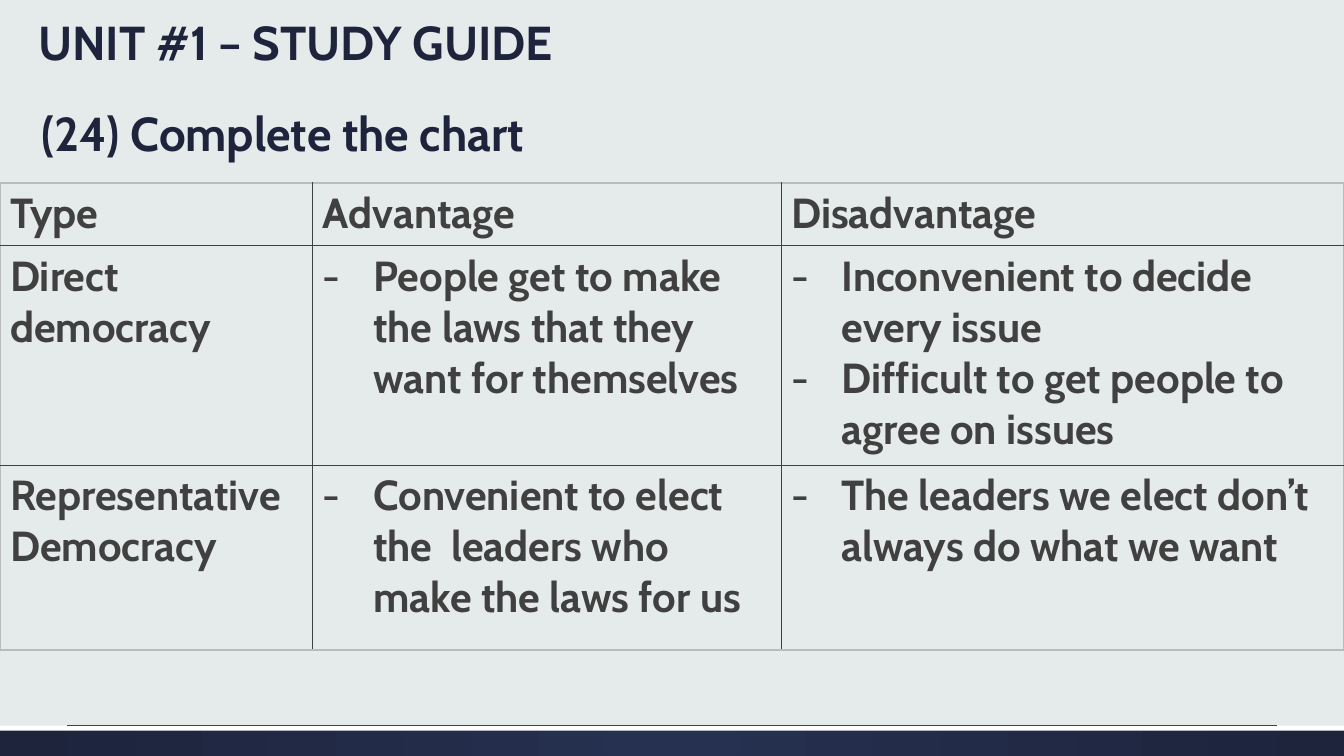
"""Build the study guide slide that compares two types of democracy."""
import pptx
import pptx.dml.color
import pptx.enum.dml
import pptx.enum.shapes
import pptx.enum.text
import pptx.oxml
import pptx.oxml.ns
import pptx.util
from lxml import etree

RGBColor = pptx.dml.color.RGBColor
BACKGROUND = RGBColor(0xE5, 0xEA, 0xEA)
NAVY = RGBColor(0x1D, 0x24, 0x3C)
NAVY_LIGHT = RGBColor(0x26, 0x30, 0x50)
CHARCOAL = RGBColor(0x40, 0x40, 0x40)
FRAME_GREY = RGBColor(0xB8, 0xBC, 0xBC)
WHITE = RGBColor(0xFF, 0xFF, 0xFF)
FONT = "Cabin"
EMU_PER_PX = 9525
SLIDE_WIDTH, SLIDE_HEIGHT = 1280, 720
COLUMN_WIDTHS = [298, 446, 536]
ROW_HEIGHTS = [60, 209, 176]
ROWS = [
    [["Type"], ["Advantage"], ["Disadvantage"]],
    [
        ["Direct democracy"],
        ["People get to make the laws that they want for themselves"],
        ["Inconvenient to decide every issue", "Difficult to get people to agree on issues"],
    ],
    [
        ["Representative Democracy"],
        ["Convenient to elect the  leaders who make the laws for us"],
        ["The leaders we elect don’t always do what we want"],
    ],
]


def px(*lengths):
    """Turn pixel lengths into a list of EMU lengths."""
    return [pptx.util.Emu(length * EMU_PER_PX) for length in lengths]


def add_child(parent, tag, **attributes):
    """Append a DrawingML child element with the given attributes."""
    return etree.SubElement(parent, pptx.oxml.ns.qn(tag), **attributes)


def write_text(text_frame, lines, size, color, spacing=None, bulleted=False):
    """Write one bold, left-aligned paragraph per line."""
    text_frame.word_wrap = True
    for index, line in enumerate(lines):
        paragraph = text_frame.add_paragraph() if index else text_frame.paragraphs[0]
        paragraph.alignment = pptx.enum.text.PP_ALIGN.LEFT
        paragraph.line_spacing = spacing
        run = paragraph.add_run()
        run.text = line
        run.font.name = FONT
        run.font.size = pptx.util.Pt(size)
        run.font.bold = True
        run.font.color.rgb = color
        if bulleted:
            properties = paragraph._p.get_or_add_pPr()
            indent = px(48)[0]
            properties.set("marL", str(indent))
            properties.set("indent", str(-indent))
            add_child(properties, "a:buFont", typeface=FONT)
            add_child(properties, "a:buChar", char="-")


def format_heading(shape, text, box):
    """Place a heading and write its text."""
    shape.left, shape.top, shape.width, shape.height = px(*box)
    shape.text_frame.auto_size = pptx.enum.text.MSO_AUTO_SIZE.NONE
    shape.text_frame.vertical_anchor = pptx.enum.text.MSO_ANCHOR.BOTTOM
    write_text(shape.text_frame, [text], size=34, color=NAVY, spacing=0.9)


def add_band(slide, top, height):
    """Add a full-width white band without outline."""
    band = slide.shapes.add_shape(
        pptx.enum.shapes.MSO_SHAPE.RECTANGLE, *px(0, top, SLIDE_WIDTH, height)
    )
    band.shadow.inherit = False
    band.line.fill.background()
    band.fill.solid()
    band.fill.fore_color.rgb = WHITE
    return band


def apply_radial_gradient(shape, inner, outer):
    """Fill a shape with a gradient that runs outward from its centre."""
    shape.fill.gradient()
    for stop, color, position in zip(shape.fill.gradient_stops, (inner, outer), (0, 1)):
        stop.color.rgb = color
        stop.position = position
    gradient = shape._element.spPr.find(pptx.oxml.ns.qn("a:gradFill"))
    gradient.remove(gradient.find(pptx.oxml.ns.qn("a:lin")))
    center = add_child(gradient, "a:path", path="circle")
    add_child(center, "a:fillToRect", l="50000", t="50000", r="50000", b="50000")


def add_rule(slide, left, right, top):
    """Add a thin horizontal line."""
    rule = slide.shapes.add_connector(
        pptx.enum.shapes.MSO_CONNECTOR.STRAIGHT, *px(left, top, right, top)
    )
    rule.line.color.rgb = CHARCOAL
    rule.line.width = pptx.util.Pt(0.75)
    add_child(rule._element.spPr, "a:effectLst")


def set_borders(cell, outer_sides):
    """Draw grey outer borders and dark inner borders on a cell."""
    properties = cell._tc.get_or_add_tcPr()
    for side in "LRTB":
        color, points = (FRAME_GREY, 1.5) if side in outer_sides else (CHARCOAL, 1)
        border = add_child(properties, "a:ln" + side, w=str(pptx.util.Pt(points)))
        add_child(add_child(border, "a:solidFill"), "a:srgbClr", val=str(color))


def add_comparison_table(slide):
    """Add the table of advantages and disadvantages."""
    table = slide.shapes.add_table(
        len(ROWS), len(COLUMN_WIDTHS), *px(0, 174, sum(COLUMN_WIDTHS), sum(ROW_HEIGHTS))
    ).table
    table.first_row = table.horz_banding = False
    for column, width in zip(table.columns, px(*COLUMN_WIDTHS)):
        column.width = width
    last_row, last_column = len(ROWS) - 1, len(COLUMN_WIDTHS) - 1
    for row_index, height in enumerate(px(*ROW_HEIGHTS)):
        table.rows[row_index].height = height
        for column_index, lines in enumerate(ROWS[row_index]):
            cell = table.cell(row_index, column_index)
            edges = {
                "L": column_index == 0,
                "R": column_index == last_column,
                "T": row_index == 0,
                "B": row_index == last_row,
            }
            set_borders(cell, [side for side, outer in edges.items() if outer])
            cell.fill.background()
            bulleted = row_index > 0 and column_index > 0
            write_text(cell.text_frame, lines, size=30, color=CHARCOAL, bulleted=bulleted)


def main():
    """Build and save the presentation."""
    presentation = pptx.Presentation()
    presentation.slide_width, presentation.slide_height = px(SLIDE_WIDTH, SLIDE_HEIGHT)
    slide = presentation.slides.add_slide(presentation.slide_layouts[5])
    slide.background.fill.solid()
    slide.background.fill.fore_color.rgb = BACKGROUND

    footer = add_band(slide, top=691, height=29)
    apply_radial_gradient(footer, NAVY_LIGHT, NAVY)
    add_band(slide, top=691, height=5)
    add_rule(slide, left=64, right=1216, top=691)

    format_heading(slide.shapes.title, "(24) Complete the chart", (30, 97, 1186, 62))
    add_comparison_table(slide)
    unit_box = slide.shapes.add_textbox(*px(0, 0, 1, 1))
    format_heading(unit_box, "UNIT #1 – STUDY GUIDE", (27, 0, 1186, 72))
    presentation.save("out.pptx")


if __name__ == "__main__":
    main()
